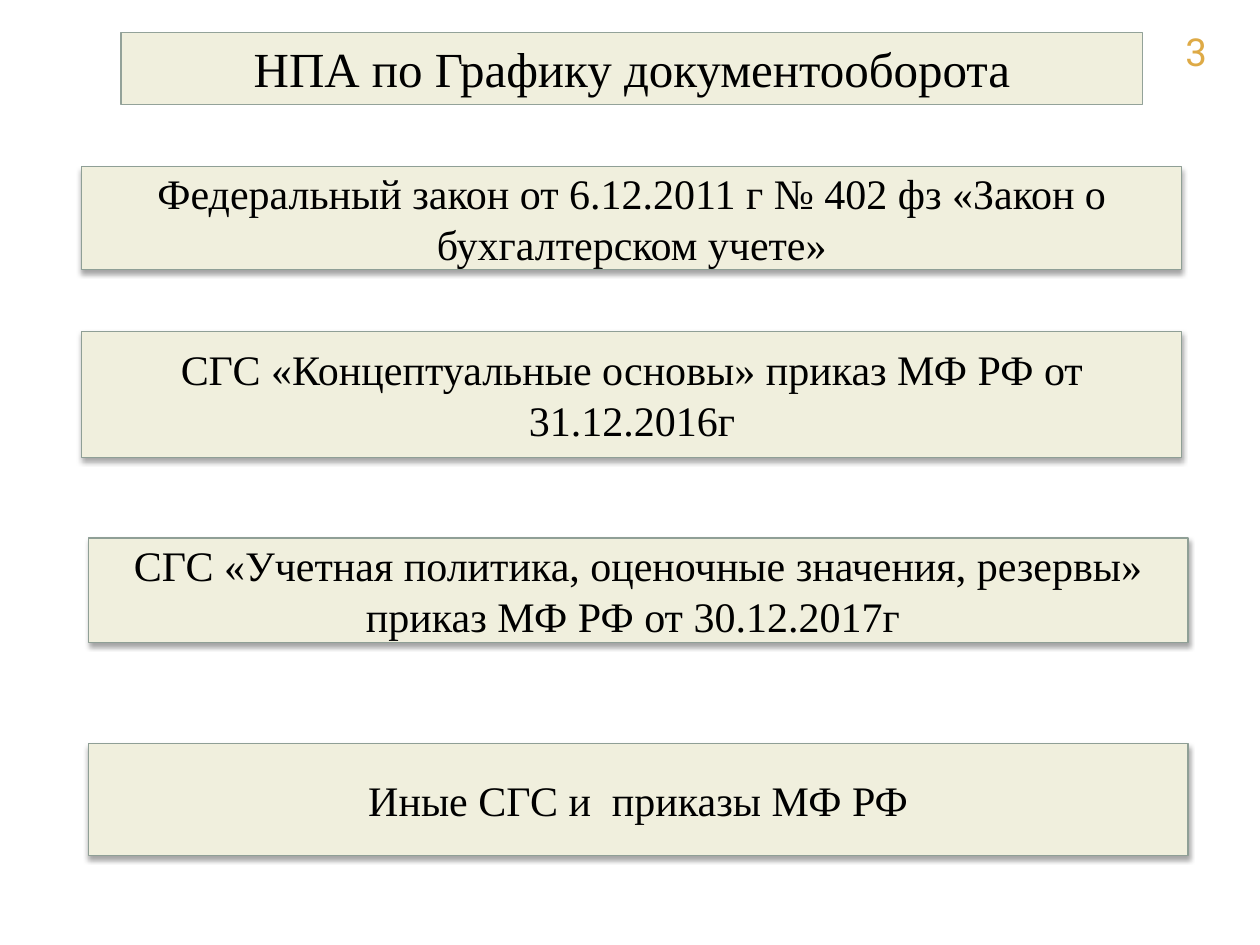
from lxml import etree
from pptx import Presentation
from pptx.dml.color import RGBColor
from pptx.enum.shapes import MSO_SHAPE as Shape
from pptx.enum.text import MSO_ANCHOR as Anchor, PP_ALIGN as Align
from pptx.oxml.ns import qn
from pptx.util import Inches, Pt


def color(code):
    return RGBColor.from_string(code)


def write(shape, text, size=24, font="Times New Roman", ink="000000",
          align=Align.CENTER, anchor=Anchor.MIDDLE):
    frame = shape.text_frame
    frame.word_wrap = True
    frame.vertical_anchor = anchor
    para = frame.paragraphs[0]
    para.alignment = align
    run = para.add_run()
    run.text = text
    run.font.size = Pt(size)
    run.font.name = font
    run.font.color.rgb = color(ink)


deck = Presentation()
deck.slide_width = Inches(10)
deck.slide_height = Inches(7.5)
slide = deck.slides.add_slide(deck.slide_layouts[6])

number = slide.shapes.add_textbox(Inches(9.31), Inches(0.11), Inches(0.93), Inches(0.59))
write(number, "3", size=22, font="Roboto", ink="DEAA46", align=Align.LEFT)

boxes = [
    ("НПА по Графику документооборота", 0.96, 0.26, 8.11, 0.57),
    ("Федеральный закон от 6.12.2011 г № 402 фз «Закон о бухгалтерском учете»",
     0.65, 1.32, 8.73, 0.82),
    ("СГС «Концептуальные основы» приказ МФ РФ от 31.12.2016г", 0.65, 2.63, 8.73, 1),
    ("СГС «Учетная политика, оценочные значения, резервы» приказ МФ РФ от 30.12.2017г ",
     0.7, 4.27, 8.73, 0.83),
    ("Иные СГС и  приказы МФ РФ", 0.7, 5.9, 8.73, 0.89),
]
for index, (text, left, top, width, height) in enumerate(boxes):
    title = index == 0
    box = slide.shapes.add_shape(
        Shape.RECTANGLE, Inches(left), Inches(top), Inches(width), Inches(height))
    box.shadow.inherit = False
    box.fill.solid()
    box.fill.fore_color.rgb = color("F0EFDD")
    box.line.color.rgb = color("93A299" if title else "8F9F96")
    box.line.width = Pt(0.75)
    if title:
        write(box, text, size=28, anchor=Anchor.TOP)
        continue
    write(box, text)
    effects = box.element.spPr.find(qn("a:effectLst"))
    shadow = etree.SubElement(
        effects, qn("a:outerShdw"), blurRad=str(Pt(3.1)), dist=str(Pt(1.8)),
        dir="5400000", rotWithShape="0")
    tint = etree.SubElement(shadow, qn("a:srgbClr"), val="000000")
    etree.SubElement(tint, qn("a:alpha"), val="35000")

deck.save("out.pptx")
